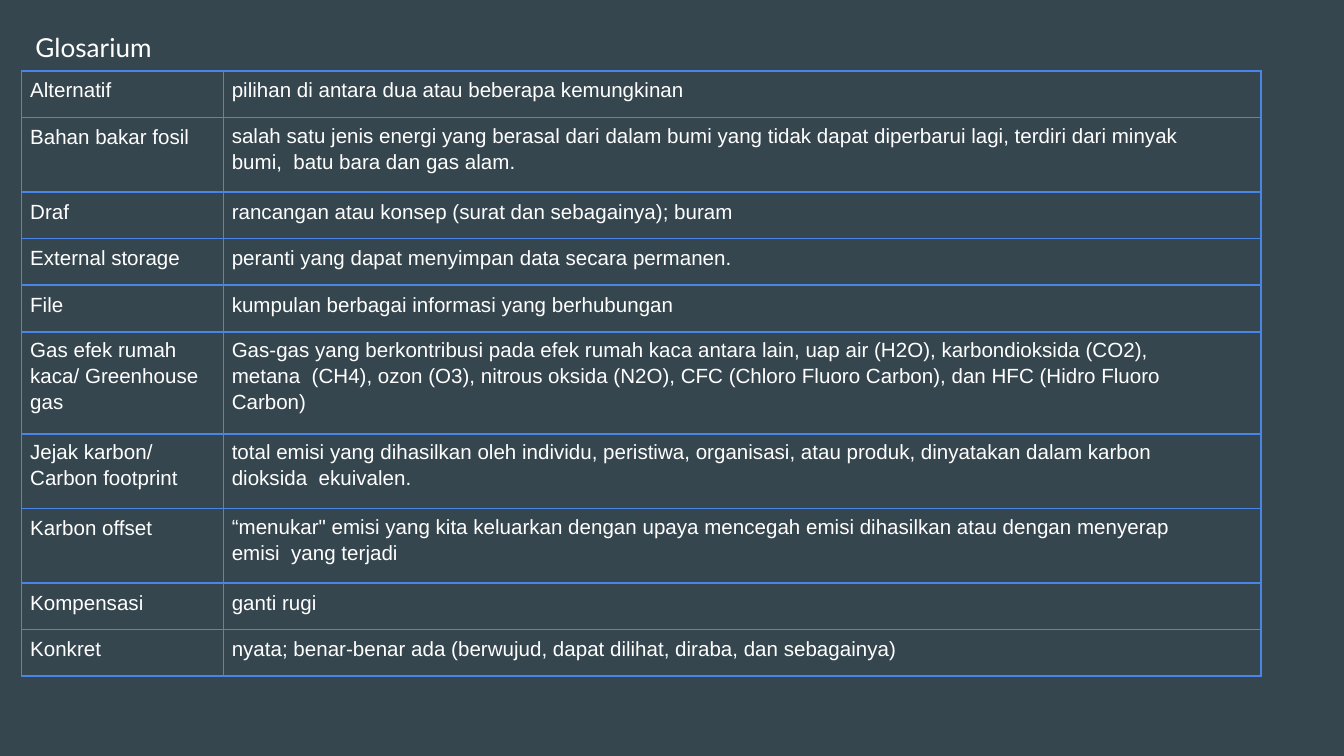
from lxml import etree
from pptx import Presentation
from pptx.dml.color import RGBColor
from pptx.enum import shapes
from pptx.oxml import ns
from pptx.util import Cm, Pt

HUES = {"back": "36464F", "text": "FFFFFF", "line": "4985E8"}
WIDTHS = (3.81, 19.61)
HEIGHTS = {1: 0.88, 2: 1.41, 3: 1.93}  # row height by lines of text

# term, meaning, lines in each
TERMS = [
    ("Alternatif", "pilihan di antara dua atau beberapa kemungkinan", 1, 1),
    ("Bahan bakar fosil",
     "salah satu jenis energi yang berasal dari dalam bumi yang tidak dapat "
     "diperbarui lagi, terdiri dari minyak bumi,  batu bara dan gas alam.", 1, 2),
    ("Draf", "rancangan atau konsep (surat dan sebagainya); buram", 1, 1),
    ("External storage", "peranti yang dapat menyimpan data secara permanen.", 1, 1),
    ("File", "kumpulan berbagai informasi yang berhubungan", 1, 1),
    ("Gas efek rumah  kaca/ Greenhouse  gas",
     "Gas-gas yang berkontribusi pada efek rumah kaca antara lain, uap air (H2O), "
     "karbondioksida (CO2), metana  (CH4), ozon (O3), nitrous oksida (N2O), "
     "CFC (Chloro Fluoro Carbon), dan HFC (Hidro Fluoro Carbon)", 3, 3),
    ("Jejak karbon/  Carbon footprint",
     "total emisi yang dihasilkan oleh individu, peristiwa, organisasi, atau produk, "
     "dinyatakan dalam karbon dioksida  ekuivalen.", 2, 2),
    ("Karbon offset",
     "“menukar\" emisi yang kita keluarkan dengan upaya mencegah emisi dihasilkan "
     "atau dengan menyerap emisi  yang terjadi", 1, 2),
    ("Kompensasi", "ganti rugi", 1, 1),
    ("Konkret",
     "nyata; benar-benar ada (berwujud, dapat dilihat, diraba, dan sebagainya)", 1, 1),
]


def paint(fill, hue):
    fill.solid()
    fill.fore_color.rgb = RGBColor.from_string(HUES[hue])


def write(frame, words, face, size):
    frame.text = words
    font = frame.paragraphs[0].runs[0].font
    font.name, font.size = face, Pt(size)
    font.color.rgb = RGBColor.from_string(HUES["text"])


def add_back(slide, deck):
    back = slide.shapes.add_shape(shapes.MSO_SHAPE.RECTANGLE, 0, 0,
                                  deck.slide_width, deck.slide_height)
    back.shadow.inherit = False
    paint(back.fill, "back")
    back.line.fill.background()


def add_title(slide):
    frame = slide.shapes.add_textbox(Cm(0.64), Cm(0.56), Cm(2.26), Cm(0.66)).text_frame
    frame.margin_left = Cm(0.03)
    frame.margin_top = Cm(0.03)
    frame.margin_right = frame.margin_bottom = 0
    frame.word_wrap = False
    write(frame, "Glosarium", "Lato", 14)


def edge(cell):
    """Draw a line on all four sides of a cell; call before the fill."""
    props = cell._tc.get_or_add_tcPr()
    for side in "LRTB":
        line = etree.SubElement(props, ns.qn(f"a:ln{side}"), w=str(Pt(1)))
        fill = etree.SubElement(line, ns.qn("a:solidFill"))
        etree.SubElement(fill, ns.qn("a:srgbClr"), val=HUES["line"])


def fill_cell(cell, words, lines, right):
    edge(cell)
    paint(cell.fill, "back")
    write(cell.text_frame, words, "Arial", 11)
    cell.margin_left = Cm(0.16)
    cell.margin_right = Cm(right if lines > 1 else 0)
    cell.margin_top = Cm(0.08 if lines > 1 else 0.16)
    cell.margin_bottom = 0
    if lines > 1:
        cell.text_frame.paragraphs[0].line_spacing = 1.14


def add_terms(slide):
    tall = [HEIGHTS[max(row[2:])] for row in TERMS]
    table = slide.shapes.add_table(len(TERMS), 2, Cm(0.41), Cm(1.34),
                                   Cm(sum(WIDTHS)), Cm(sum(tall))).table
    table.first_row = table.horz_banding = False
    for col, width in zip(table.columns, WIDTHS):
        col.width = Cm(width)
    for row, high, (term, sense, first, second) in zip(table.rows, tall, TERMS):
        row.height = Cm(high)
        fill_cell(row.cells[0], term, first, 0)
        fill_cell(row.cells[1], sense, second, 1.15)


def main():
    deck = Presentation()
    deck.slide_width, deck.slide_height = Cm(25.4), Cm(14.29)
    slide = deck.slides.add_slide(deck.slide_layouts[6])
    add_back(slide, deck)
    add_title(slide)
    add_terms(slide)
    deck.save("out.pptx")


if __name__ == "__main__":
    main()
